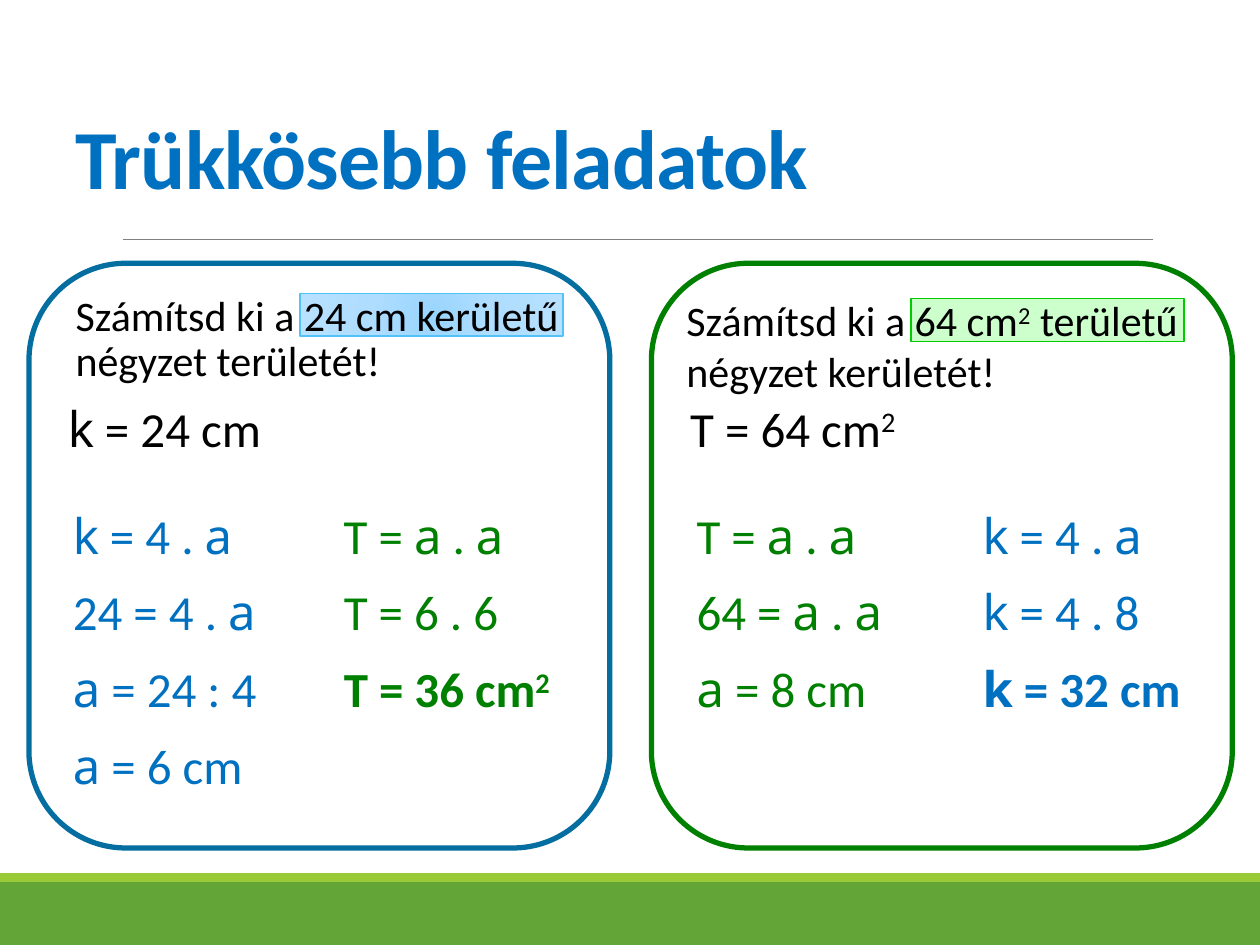
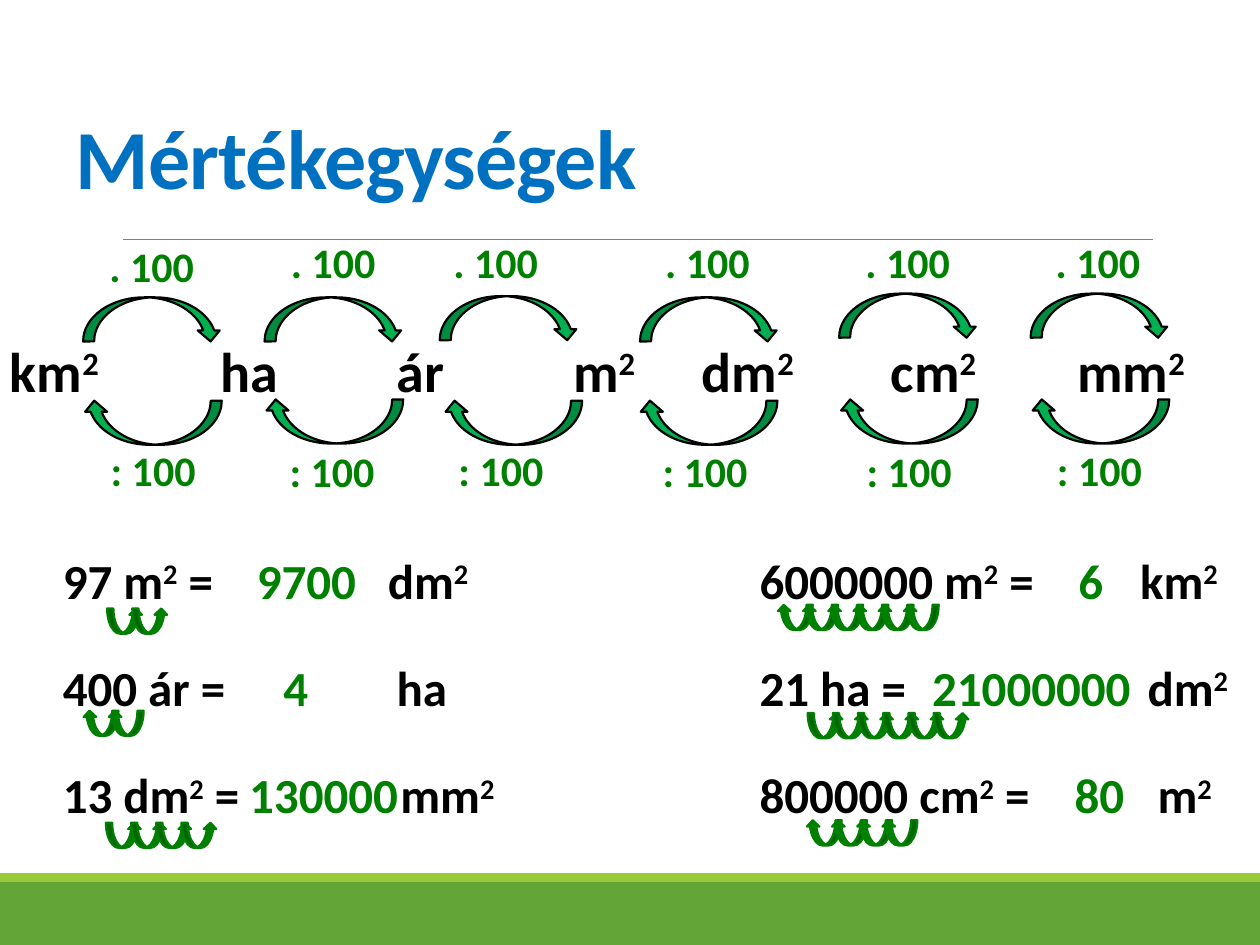
from itertools import groupby

from pptx import Presentation
from pptx.dml.color import RGBColor
from pptx.enum.shapes import MSO_CONNECTOR, MSO_SHAPE
from pptx.enum.text import MSO_ANCHOR, MSO_AUTO_SIZE, PP_ALIGN
from pptx.oxml import parse_xml
from pptx.oxml.ns import nsdecls, qn
from pptx.util import Inches, Pt

BLUE, GREEN, BLACK = "0070C0", "008000", "000000"
FONT, LETTER_FONT = "Calibri", "Noto Sans"


def rgb(hex_color):
    return RGBColor.from_string(hex_color)


def box(left, top, width, height):
    return [Inches(v) for v in (left, top, width, height)]


def write(tf, text, size=28, color=BLACK, bold=False, letters="", spacing=0,
          line=None, before=0, after=0, indent=0):
    """Fill a text frame; ² is set as a raised 2, letters use the letter font."""
    p = tf.paragraphs[0]
    p.alignment = PP_ALIGN.LEFT
    p.line_spacing = line
    p.space_before, p.space_after = Pt(before), Pt(after)
    pPr = p._p.get_or_add_pPr()
    pPr.set("marL", str(Inches(indent)))
    pPr.set("indent", "0")
    for (raised, letter), chars in groupby(text, lambda c: (c == "²", c in letters)):
        r = p.add_run()
        r.text = "2" if raised else "".join(chars)
        r.font.name = LETTER_FONT if letter else FONT
        r.font.size, r.font.bold = Pt(size), bold
        r.font.color.rgb = rgb(color)
        rPr = r._r.get_or_add_rPr()
        if raised:
            rPr.set("baseline", "30000")
        if spacing:
            rPr.set("spc", str(int(spacing * 100)))


def add_text(s, left, top, width, text, height=0.57, **fmt):
    tf = s.shapes.add_textbox(*box(left, top, width, height)).text_frame
    tf.word_wrap = True
    write(tf, text, **fmt)


def add_shape(s, kind, left, top, width, height, fill=None, line=None, weight=1):
    sp = s.shapes.add_shape(kind, *box(left, top, width, height))
    sp.shadow.inherit = False
    if fill:
        sp.fill.solid()
        sp.fill.fore_color.rgb = rgb(fill)
    else:
        sp.fill.background()
    if line:
        sp.line.color.rgb = rgb(line)
        sp.line.width = Pt(weight)
    else:
        sp.line.fill.background()
    return sp


def glow_fill(sp, stops):
    """Replace an empty fill by a gradient running from a corner."""
    gs = "".join(f'<a:gs pos="{pos * 1000}"><a:srgbClr val="{color}"/></a:gs>'
                 for pos, color in stops)
    grad = parse_xml(
        f'<a:gradFill {nsdecls("a")}><a:gsLst>{gs}</a:gsLst><a:path path="circle">'
        '<a:fillToRect l="100000" t="100000" r="100000" b="100000"/>'
        '</a:path></a:gradFill>')
    spPr = sp._element.spPr
    spPr.replace(spPr.find(qn("a:noFill")), grad)


def new_slide(prs, layout, title):
    """Slide with the green footer bands, the rule and the title."""
    s = prs.slides.add_slide(prs.slide_layouts[layout])
    add_shape(s, MSO_SHAPE.RECTANGLE, 0, 7, 10, 0.5, "63A537")
    add_shape(s, MSO_SHAPE.RECTANGLE, 0, 6.93, 10, 0.07, "99CB38")
    rule = s.shapes.add_connector(MSO_CONNECTOR.STRAIGHT, *box(0.98, 1.9, 9.15, 1.9))
    rule.line.color.rgb = rgb("808080")
    rule.line.width = Pt(0.5)
    rule._element.spPr.append(parse_xml(f'<a:effectLst {nsdecls("a")}/>'))

    sp = s.shapes.title
    sp.left, sp.top, sp.width, sp.height = box(0.5, 0.44, 9, 1.25)
    tf = sp.text_frame
    tf.auto_size, tf.vertical_anchor = MSO_AUTO_SIZE.NONE, MSO_ANCHOR.BOTTOM
    write(tf, title, size=48, color=BLUE, bold=True, spacing=-0.5, line=0.85)
    return s


# Slide 1: two worked problems
def problem_card(s, left, top, border, given, columns):
    """Given value, columns of steps as (offset, colour, steps), and the frame."""
    add_text(s, left + 0.21, top + 1.02, 1.87, given, letters="k")
    for offset, color, steps in columns:
        for i, (step, width, bold) in enumerate(steps):
            add_text(s, left + offset, top + 1.87 + 0.61 * i, width, step,
                     color=color, bold=bold, letters="ka")
    add_shape(s, MSO_SHAPE.ROUNDED_RECTANGLE, left, top, 4.61, 4.64,
              line=border, weight=3)


def problems_slide(prs):
    s = new_slide(prs, 1, "Trükkösebb feladatok")

    # Problem statements over their highlights
    add_shape(s, MSO_SHAPE.RECTANGLE, 7.23, 2.37, 2.17, 0.34, "CCFFCC", "00CC00")
    add_text(s, 5.23, 2.29, 4.5, "Számítsd ki a 64 cm² területű négyzet kerületét!",
             height=4.95, size=24, before=4, indent=0.12)
    mark = add_shape(s, MSO_SHAPE.RECTANGLE, 2.38, 2.33, 2.09, 0.34, line="51C3F9")
    glow_fill(mark, [(0, "99D5FE"), (45, "AEDDFF"), (100, "B8E1FF")])

    body = s.placeholders[1]
    body.left, body.top, body.width, body.height = box(0.48, 2.29, 4.5, 4.95)
    s.shapes._spTree.append(body._element)
    tf = body.text_frame
    tf.auto_size = MSO_AUTO_SIZE.NONE
    tf.margin_left = tf.margin_right = 0
    write(tf, "Számítsd ki a 24 cm kerületű négyzet területét!",
          size=24, line=0.9, before=12, after=2, indent=0.12)
    tf.paragraphs[0]._p.get_or_add_pPr().append(
        parse_xml(f'<a:buNone {nsdecls("a")}/>'))

    # Solutions
    problem_card(s, 0.23, 2.09, "056EA0", "k = 24 cm", [
        (0.25, BLUE, [("k = 4 . a", 1.57, False), ("24 = 4 . a", 1.72, False),
                      ("a = 24 : 4", 1.72, False), ("a = 6 cm", 1.61, False)]),
        (2.4, GREEN, [("T = a . a", 1.57, False), ("T = 6 . 6", 1.45, False),
                      ("T = 36 cm²", 1.88, True)]),
    ])
    problem_card(s, 5.17, 2.09, GREEN, "T = 64 cm²", [
        (2.53, BLUE, [("k = 4 . a", 1.57, False), ("k = 4 . 8", 1.5, False),
                      ("k = 32 cm", 1.8, True)]),
        (0.26, GREEN, [("T = a . a", 1.57, False), ("64 = a . a", 1.78, False),
                       ("a = 8 cm", 1.61, False)]),
    ])


# Slide 2: units of area
def curved_arrow(s, left, top, width, height, back, under, fill, line):
    """Arrow over the text, or under it pointing forward or back."""
    kind = (MSO_SHAPE.CURVED_UP_ARROW if under and not back
            else MSO_SHAPE.CURVED_DOWN_ARROW)
    sp = add_shape(s, kind, left, top, width, height, fill, line, 1.25)
    sp.rotation = 180 if back else 0


def unit_ladder(s, top):
    units = [("km²", -0.02), ("ha", 1.65), ("ár", 3.05), ("m²", 4.45),
             ("dm²", 5.47), ("cm²", 6.97), ("mm²", 8.45)]
    for unit, left in units:
        add_text(s, left, top, 1.15, unit, height=0.64, size=32, bold=True)

    # Arrow left and top, factor left and top: above, then below the units
    above = [(0.66, -0.26, 0.77, -0.76), (2.1, -0.26, 2.21, -0.79),
             (3.49, -0.27, 3.5, -0.79), (5.08, -0.26, 5.18, -0.79),
             (6.66, -0.29, 6.77, -0.79), (8.18, -0.29, 8.28, -0.79)]
    below = [(0.66, 0.56, 0.78, 0.86), (2.1, 0.55, 2.2, 0.87),
             (3.52, 0.56, 3.54, 0.86), (5.07, 0.56, 5.16, 0.87),
             (6.66, 0.55, 6.78, 0.87), (8.18, 0.55, 8.29, 0.86)]
    for places, factor, under in ((above, ". 100", False), (below, ": 100", True)):
        for arrow_x, arrow_y, factor_x, factor_y in places:
            curved_arrow(s, arrow_x, top + arrow_y, 1.1, 0.35, under, under,
                         "00B050", BLACK)
            add_text(s, factor_x, top + factor_y, 0.88, factor, height=0.5,
                     size=24, color=GREEN, bold=True)


def conversion(s, left, top, question, width, answer, unit, hops):
    """question = answer unit, with hops as (offset, drop, count, back)."""
    for (text, offset, w), color in zip(((question, 0, width), answer, unit),
                                        (BLACK, GREEN, BLACK)):
        add_text(s, left + offset, top, w, text, color=color, bold=True)
    offset, drop, count, back = hops
    for i in range(count):
        curved_arrow(s, left + offset + 0.2 * i, top + drop, 0.28, 0.2, back, True,
                     GREEN, GREEN)


def units_slide(prs):
    s = new_slide(prs, 5, "Mértékegységek")
    unit_ladder(s, 2.62)

    columns = {
        0.4: [("97 m² =", 1.5, ("9700", 1.54, 1.08), ("dm²", 2.58, 1),
               (0.45, 0.51, 2, False)),
              ("400 ár =", 1.6, ("4", 1.75, 0.4), ("ha", 2.65, 0.8),
               (0.26, 0.47, 2, True)),
              ("13 dm² =", 1.7, ("130000", 1.48, 1.4), ("mm²", 2.68, 1),
               (0.44, 0.51, 4, False))],
        5.93: [("6000000 m² =", 2.5, ("6", 2.53, 0.4), ("km²", 3.02, 1),
                (0.24, 0.48, 6, True)),
               ("21 ha =", 1.5, ("21000000", 1.37, 1.8), ("dm²", 3.08, 1),
                (0.48, 0.49, 6, False)),
               ("800000 cm² =", 2.5, ("80", 2.5, 0.6), ("m²", 3.16, 0.8),
                (0.47, 0.49, 4, True))],
    }
    for left, rows in columns.items():
        for i, row in enumerate(rows):
            conversion(s, left, 4.32 + 0.85 * i, *row)


def main():
    prs = Presentation()
    prs.slide_width, prs.slide_height = Inches(10), Inches(7.5)
    problems_slide(prs)
    units_slide(prs)
    prs.save("out.pptx")


if __name__ == "__main__":
    main()
